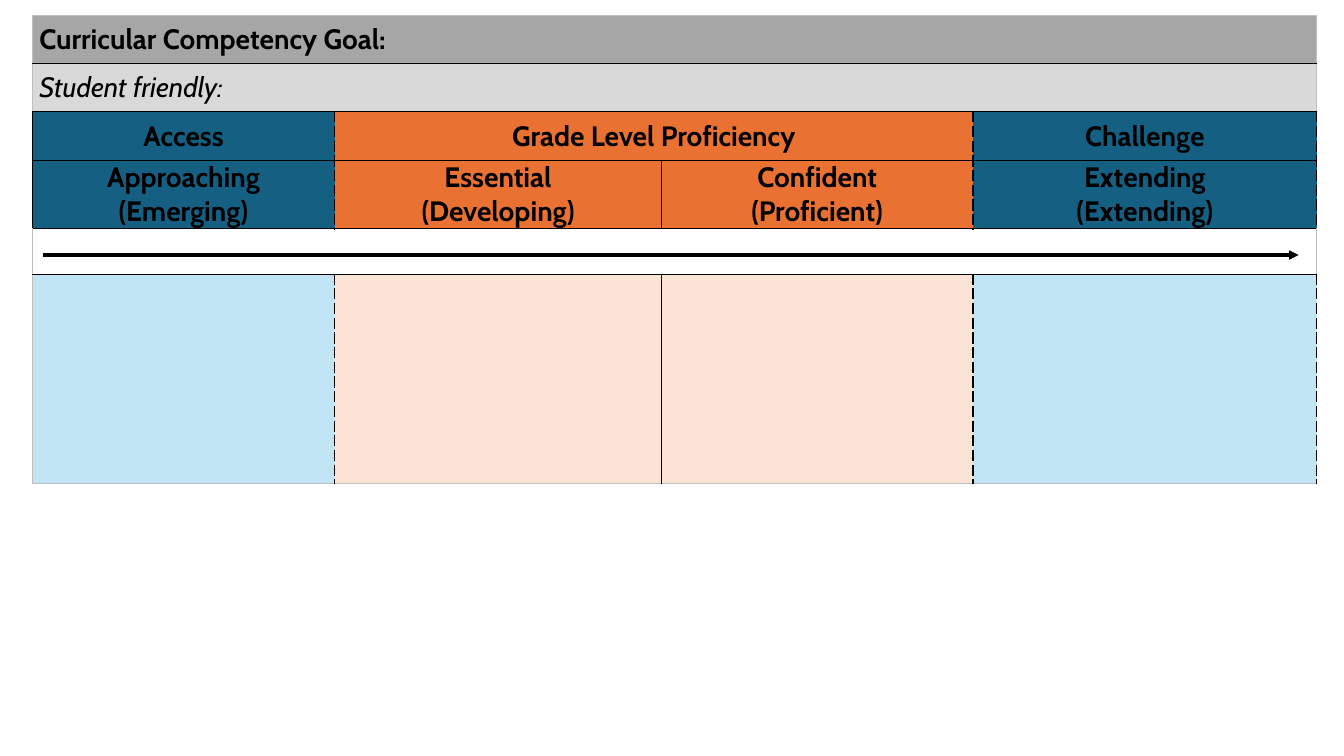
from lxml import etree
from pptx import Presentation
from pptx.dml.color import RGBColor
from pptx.enum.shapes import MSO_CONNECTOR as Conn
from pptx.enum.text import MSO_ANCHOR as Anchor, PP_ALIGN as Align
from pptx.oxml.ns import qn
from pptx.util import Inches, Pt

BLACK = RGBColor(0x00, 0x00, 0x00)
WHITE = RGBColor(0xFF, 0xFF, 0xFF)
EDGE = RGBColor(0xBF, 0xBF, 0xBF)
GREY = RGBColor(0xA6, 0xA6, 0xA6)
PALE = RGBColor(0xD9, 0xD9, 0xD9)
TEAL = RGBColor(0x15, 0x60, 0x82)
ORANGE = RGBColor(0xE9, 0x71, 0x32)
SKY = RGBColor(0xC1, 0xE5, 0xF5)
PEACH = RGBColor(0xFB, 0xE3, 0xD6)

COLS = [3, 3.24, 3.09, 3.41]
ROWS = [0.48, 0.48, 0.48, 0.68, 0.45, 2.08]
LEFT, TOP = 0.32, 0.15
ARROW = (0.43, 12.88, 2.53)

# Each cell: text, fill, columns spanned
GRID = [
    [("Curricular Competency Goal:", GREY, 4)],
    [("Student friendly:", PALE, 4)],
    [("Access", TEAL, 1), ("Grade Level Proficiency", ORANGE, 2),
     ("Challenge", TEAL, 1)],
    [("Approaching (Emerging)", TEAL, 1), ("Essential\n(Developing)", ORANGE, 1),
     ("Confident\n(Proficient)", ORANGE, 1), ("Extending\n(Extending)", TEAL, 1)],
    [("", None, 4)],
    [("", SKY, 1), ("", PEACH, 1), ("", PEACH, 1), ("", SKY, 1)],
]


def put_text(cell, text, bold=True, italic=False, align=Align.CENTER):
    cell.text = text
    for para in cell.text_frame.paragraphs:
        para.alignment = align
        para.font.size = Pt(20)
        for run in para.runs:
            font = run.font
            font.name, font.size = "Cabin", Pt(20)
            font.bold, font.italic = bold, italic
            font.color.rgb = BLACK


def add_border(cell, side, color, dash="solid"):
    """Add a 1 pt border; call in the order L, R, T, B."""
    props = cell._tc.get_or_add_tcPr()
    line = etree.Element(qn("a:ln" + side), w=str(Pt(1)))
    fill = etree.SubElement(line, qn("a:solidFill"))
    etree.SubElement(fill, qn("a:srgbClr"), val=str(color))
    etree.SubElement(line, qn("a:prstDash"), val=dash)
    count = sum(1 for part in props if part.tag.startswith(qn("a:ln")))
    props.insert(count, line)


def add_borders(cell, row, first, last):
    split = len(GRID[row]) > 1
    dashed = {1, 3, 4} if split else set()
    for side, at in (("L", first), ("R", last)):
        dash = "sysDash" if at in dashed else "solid"
        outer = at in (0, len(COLS)) and dash == "solid"
        grey = outer and GRID[row][0][1] != TEAL
        add_border(cell, side, EDGE if grey else BLACK, dash)
    add_border(cell, "T", EDGE if row == 0 else BLACK)
    add_border(cell, "B", EDGE if row == len(ROWS) - 1 else BLACK)


def add_grid(slide):
    frame = slide.shapes.add_table(
        len(ROWS), len(COLS), Inches(LEFT), Inches(TOP),
        Inches(sum(COLS)), Inches(sum(ROWS)))
    table = frame.table
    table.first_row = table.horz_banding = False
    for col, width in zip(table.columns, COLS):
        col.width = Inches(width)
    for row, height in zip(table.rows, ROWS):
        row.height = Inches(height)

    for r, cells in enumerate(GRID):
        first = 0
        for text, color, span in cells:
            last = first + span
            for c in range(first, last):
                cell = table.cell(r, c)
                cell.fill.solid()
                cell.fill.fore_color.rgb = color or WHITE
                cell.vertical_anchor = Anchor.MIDDLE
                cell.margin_left = cell.margin_right = Inches(0.07)
                cell.margin_top = cell.margin_bottom = 0
                add_borders(cell, r, first, last)
            cell = table.cell(r, first)
            if span > 1:
                cell.merge(table.cell(r, last - 1))
            put_text(cell, text, bold=r != 1, italic=r == 1,
                     align=Align.LEFT if r < 2 else Align.CENTER)
            first = last


def add_arrow(slide):
    start, end, y = map(Inches, ARROW)
    arrow = slide.shapes.add_connector(Conn.STRAIGHT, start, y, end, y)
    arrow.line.color.rgb = BLACK
    arrow.line.width = Pt(2.25)
    etree.SubElement(arrow.line._get_or_add_ln(), qn("a:tailEnd"), type="triangle")
    etree.SubElement(arrow._element.spPr, qn("a:effectLst"))


def main():
    prs = Presentation()
    prs.slide_width, prs.slide_height = Inches(13.33), Inches(7.5)
    slide = prs.slides.add_slide(prs.slide_layouts[6])
    add_grid(slide)
    add_arrow(slide)
    prs.save("out.pptx")


if __name__ == "__main__":
    main()
